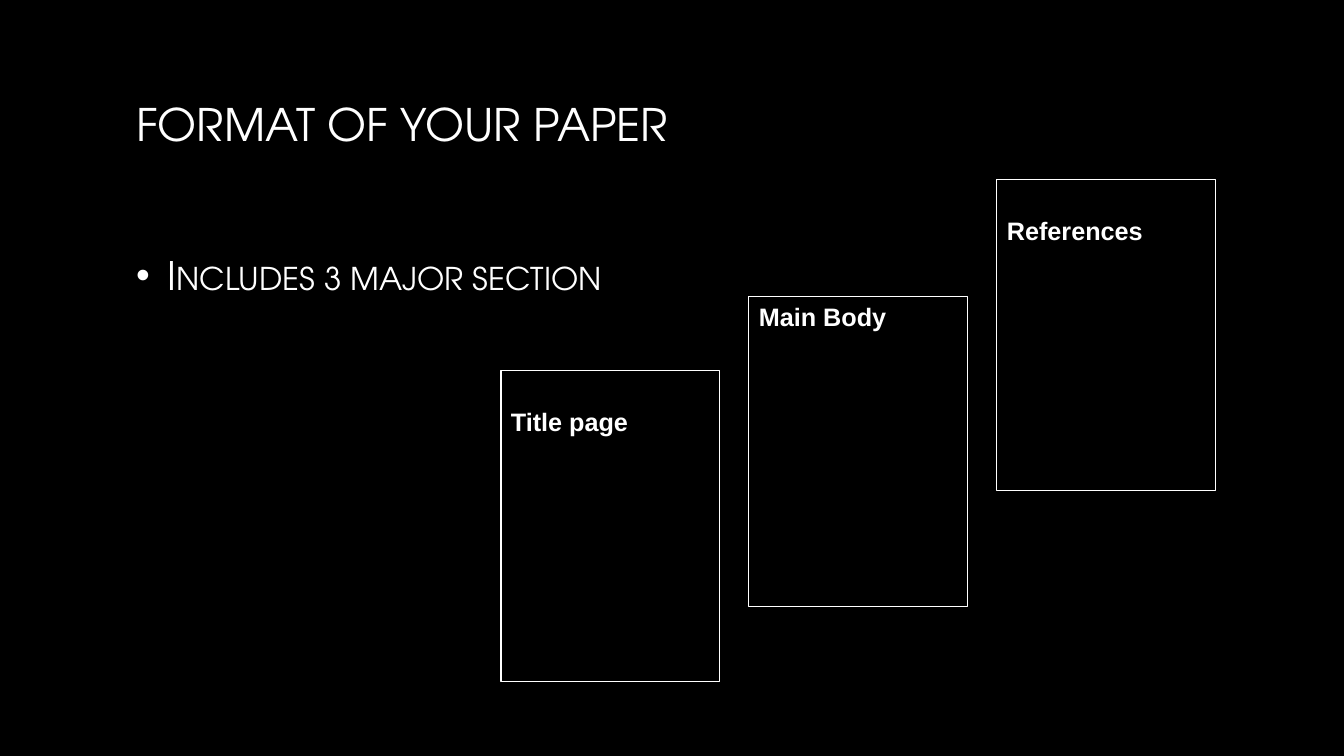
from dataclasses import dataclass

from lxml.etree import SubElement
from pptx import Presentation
from pptx.dml.color import RGBColor
from pptx.enum.shapes import MSO_SHAPE
from pptx.enum.text import MSO_ANCHOR, MSO_AUTO_SIZE, PP_ALIGN
from pptx.oxml.ns import qn
from pptx.util import Inches, Pt


@dataclass(frozen=True)
class Theme:
    background: RGBColor = RGBColor(0, 0, 0)
    ink: RGBColor = RGBColor(255, 255, 255)
    heading_font: str = "TeX Gyre Adventor"
    label_font: str = "Arial"
    title_size: Pt = Pt(32)
    body_size: Pt = Pt(28)
    label_size: Pt = Pt(18)
    outline: Pt = Pt(0.75)


def assign(target, values):
    for name, value in values.items():
        setattr(target, name, value)


class Deck:
    """Holds the theme and current slide; lengths are percentages of the slide."""

    def __init__(self, theme):
        self.theme = theme
        self.file = Presentation()
        assign(self.file, {"slide_width": Inches(13.33), "slide_height": Inches(7.5)})
        self.slide = self.file.slides.add_slide(self.file.slide_layouts[1])
        fill = self.slide.background.fill
        fill.solid()
        fill.fore_color.rgb = theme.background

    def box(self, left, top, width, height):
        across, down = self.file.slide_width / 100, self.file.slide_height / 100
        return [round(share * unit) for share, unit in
                zip((left, top, width, height), (across, down, across, down))]

    def set_text(self, holder, wording, frame_format, font_format):
        frame = holder.text_frame
        frame.text = wording
        assign(frame, {"word_wrap": True, "auto_size": MSO_AUTO_SIZE.NONE} | frame_format)
        line = frame.paragraphs[0]
        line.alignment = PP_ALIGN.LEFT
        font = line.runs[0].font
        assign(font, font_format)
        font.color.rgb = self.theme.ink
        return line

    def place(self, holder, bounds):
        assign(holder, dict(zip(("left", "top", "width", "height"), self.box(*bounds))))

    def title(self, wording, bounds):
        heading = self.slide.shapes.title
        self.place(heading, bounds)
        self.set_text(heading, wording, {"vertical_anchor": MSO_ANCHOR.MIDDLE},
                      {"name": self.theme.heading_font, "size": self.theme.title_size})

    def bullet(self, wording, bounds, inset):
        """Put one small-caps bullet in the body placeholder."""
        body = self.slide.placeholders[1]
        self.place(body, bounds)
        line = self.set_text(body, wording,
                             {"vertical_anchor": MSO_ANCHOR.TOP, "margin_top": inset},
                             {"name": self.theme.heading_font,
                              "size": self.theme.body_size})
        line.space_before = Pt(0)
        line.runs[0].font._element.set("cap", "small")
        layout = line._p.get_or_add_pPr()
        layout.set("marL", str(Inches(0.31)))
        layout.set("indent", str(-Inches(0.31)))
        SubElement(layout, qn("a:buFont"), typeface=self.theme.label_font)
        SubElement(layout, qn("a:buChar"), char="•")

    def page(self, label, bounds, inset):
        """Draw an outlined sheet with its label near the top."""
        sheet = self.slide.shapes.add_shape(MSO_SHAPE.RECTANGLE, *self.box(*bounds))
        sheet.shadow.inherit = False
        sheet.fill.solid()
        sheet.fill.fore_color.rgb = self.theme.background
        sheet.line.color.rgb = self.theme.ink
        sheet.line.width = self.theme.outline
        self.set_text(sheet, label,
                      {"vertical_anchor": MSO_ANCHOR.TOP, "margin_top": inset},
                      {"name": self.theme.label_font, "size": self.theme.label_size,
                       "bold": True})


def main():
    deck = Deck(Theme())
    deck.title("FORMAT OF YOUR PAPER", (9.38, 2.5, 81.25, 27.6))
    deck.bullet("Includes 3 major section", (9.38, 25.2, 81.25, 59.2), Inches(0.6))

    first_left, step = 37.28, 18.45
    sections = (("Title page", 49.07, 0.35), ("Main Body", 39.2, 0.05),
                ("References", 23.8, 0.35))
    for order, (label, top, inset) in enumerate(sections):
        deck.page(label, (first_left + order * step, top, 16.28, 41.07), Inches(inset))
    deck.file.save("out.pptx")


if __name__ == "__main__":
    main()
